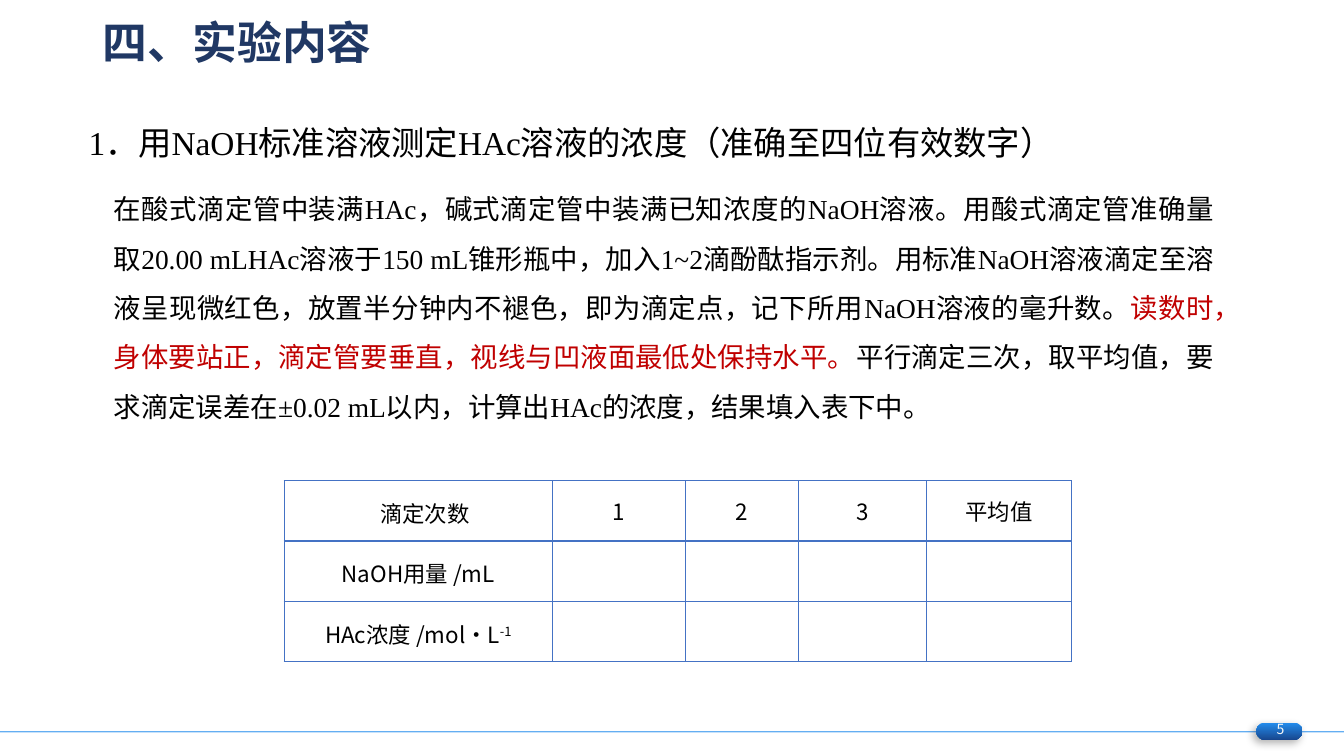
from lxml import etree
from pptx import Presentation
from pptx import util as u
from pptx.dml import color as dml
from pptx.enum import shapes, text
from pptx.oxml import ns

SLIDE_WIDTH, SLIDE_HEIGHT = u.Inches(13.33), u.Inches(7.5)
SANS, SERIF = "Noto Sans CJK SC", "Times New Roman"
BLACK, RED, NAVY, BORDER = "000000", "C00000", "203864", "4472C4"
BRIGHT_BLUE, DEEP_BLUE, OFF_WHITE = "238DED", "18478F", "F8F8F8"
CENTER, JUSTIFY = text.PP_ALIGN.CENTER, text.PP_ALIGN.JUSTIFY

HEADING = "1．用NaOH标准溶液测定HAc溶液的浓度（准确至四位有效数字）"
PROCEDURE = [
    ("在酸式滴定管中装满HAc，碱式滴定管中装满已知浓度的NaOH溶液。用酸式滴定管准确量取20.00 mLHAc溶液于150 mL锥形瓶中，"
     "加入1~2滴酚酞指示剂。用标准NaOH溶液滴定至溶液呈现微红色，放置半分钟内不褪色，即为滴定点，记下所用NaOH溶液的毫升数。",
     SERIF, BLACK),
    ("读数时，身体要站正，滴定管要垂直，视线与凹液面最低处保持水平。", SANS, RED),
    ("平行滴定三次，取平均值，要求滴定误差在±0.02 mL以内，计算出HAc的浓度，结果填入表下中。", SERIF, BLACK),
]
COLUMN_HEADS = ["1", "2", "3", "平均值"]
ROW_HEADS = ["滴定次数", "NaOH用量 /mL", "HAc浓度 /mol·L"]
COLUMN_SHARES = [19.95, 9.9, 8.4, 9.53, 10.8]
ROW_SHARE = 7.96


def across(percent):
    """Return a share of the slide's width."""
    return u.Emu(round(SLIDE_WIDTH * percent / 100))


def down(percent):
    """Return a share of the slide's height."""
    return u.Emu(round(SLIDE_HEIGHT * percent / 100))


def area(left, top, width, height):
    """Turn four percentages into a position and size."""
    return across(left), down(top), across(width), down(height)


def paint(color, value):
    """Set a colour from a hex string."""
    color.rgb = dml.RGBColor.from_string(value)


def add_xml(parent, tag, **attributes):
    """Append a DrawingML element and return it."""
    return etree.SubElement(parent, ns.qn(tag), attributes)


def write(paragraph, words, font=SANS, size=16, color=BLACK, bold=False, baseline=None):
    """Add a formatted run to a paragraph."""
    run = paragraph.add_run()
    run.text = words
    run.font.name, run.font.size, run.font.bold = font, u.Pt(size), bold
    paint(run.font.color, color)
    properties = run.font._element
    add_xml(properties, "a:ea", typeface=SANS)
    if baseline:
        properties.set("baseline", baseline)


def arrange(paragraph, alignment, spacing=1.0, before=0, left=0, first=0):
    """Set alignment, spacing and indents of a paragraph."""
    paragraph.alignment, paragraph.line_spacing = alignment, spacing
    paragraph.space_before = u.Pt(before)
    properties = paragraph._p.get_or_add_pPr()
    properties.set("marL", str(across(left)))
    properties.set("indent", str(across(first)))


def add_title(slide):
    """Place and format the slide title."""
    title = slide.shapes.title
    title.left, title.top, title.width, title.height = area(6.9, 2.13, 30.46, 10.67)
    title.text_frame.vertical_anchor = text.MSO_ANCHOR.TOP
    paragraph = title.text_frame.paragraphs[0]
    arrange(paragraph, JUSTIFY, spacing=0.9)
    write(paragraph, "四、实验内容", size=32, color=NAVY, bold=True)


def add_text_frame(slide, *place):
    """Add a wrapping text box and return its frame."""
    frame = slide.shapes.add_textbox(*area(*place)).text_frame
    frame.word_wrap = True
    return frame


def add_procedure(slide):
    """Add the heading and the experiment steps."""
    frame = add_text_frame(slide, 5.85, 15.47, 85.22, 42.13)
    heading = frame.paragraphs[0]
    arrange(heading, JUSTIFY)
    write(heading, HEADING, font=SERIF, size=23.8)
    steps = frame.add_paragraph()
    arrange(steps, JUSTIFY, spacing=1.5, before=10, left=1.88)
    for words, font, color in PROCEDURE:
        write(steps, words, font=font, size=19.6, color=color)


def format_cell(cell):
    """Give a cell no fill, thin borders and narrow margins."""
    cell.fill.background()
    cell.margin_left = cell.margin_right = u.Inches(0.07)
    cell.margin_top = cell.margin_bottom = 0
    properties = cell._tc.get_or_add_tcPr()
    for index, side in enumerate("LRTB"):
        line = add_xml(properties, f"a:ln{side}", w=str(u.Pt(1)))
        add_xml(add_xml(line, "a:solidFill"), "a:srgbClr", val=BORDER)
        properties.insert(index, line)


def add_results_table(slide):
    """Add the table for the titration results."""
    rows, columns = len(ROW_HEADS), len(COLUMN_SHARES)
    place = area(21.15, 63.6, sum(COLUMN_SHARES), rows * ROW_SHARE)
    table = slide.shapes.add_table(rows, columns, *place).table
    table.first_row = table.horz_banding = False
    for column, share in zip(table.columns, COLUMN_SHARES):
        column.width = across(share)
    for row in table.rows:
        row.height = down(ROW_SHARE)
    for cell in table.iter_cells():
        format_cell(cell)
    for index, words in enumerate(ROW_HEADS):
        paragraph = table.cell(index, 0).text_frame.paragraphs[0]
        arrange(paragraph, CENTER, spacing=1.5, first=0 if index else 0.98)
        write(paragraph, words)
    write(paragraph, "-1", baseline="30000")
    for index, words in enumerate(COLUMN_HEADS, start=1):
        cell = table.cell(0, index)
        cell.vertical_anchor = text.MSO_ANCHOR.MIDDLE
        paragraph = cell.text_frame.paragraphs[0]
        arrange(paragraph, CENTER)
        write(paragraph, words)


def add_footer_line(slide):
    """Draw the translucent line across the foot of the slide."""
    line = slide.shapes.add_connector(
        shapes.MSO_CONNECTOR.STRAIGHT, 0, down(96.8), SLIDE_WIDTH, down(96.8))
    line.line.width = u.Pt(1)
    paint(line.line.color, BRIGHT_BLUE)
    properties = line._element.spPr
    add_xml(properties.find(".//" + ns.qn("a:srgbClr")), "a:alpha", val="70000")
    add_xml(properties, "a:effectLst")


def add_page_badge(slide):
    """Draw the rounded badge and its page number."""
    badge = slide.shapes.add_shape(
        shapes.MSO_SHAPE.ROUNDED_RECTANGLE, *area(93.47, 95.6, 3.45, 2.27))
    badge.adjustments[0] = 0.5
    badge.line.fill.background()
    badge.fill.gradient()
    badge.fill.gradient_angle = 270
    for stop, color in zip(badge.fill.gradient_stops, (BRIGHT_BLUE, DEEP_BLUE)):
        paint(stop.color, color)
    badge.shadow.inherit = False
    effects = badge._element.spPr.find(ns.qn("a:effectLst"))
    shadow = add_xml(effects, "a:outerShdw", blurRad=str(u.Pt(6)),
                     dist=str(u.Pt(3)), dir="8100000", rotWithShape="0")
    add_xml(add_xml(shadow, "a:srgbClr", val=BLACK), "a:alpha", val="30000")
    paragraph = add_text_frame(slide, 93.25, 94.67, 4.05, 3.6).paragraphs[0]
    arrange(paragraph, CENTER)
    write(paragraph, "5", size=10, color=OFF_WHITE)


def main():
    """Build and save the slide."""
    presentation = Presentation()
    presentation.slide_width, presentation.slide_height = SLIDE_WIDTH, SLIDE_HEIGHT
    slide = presentation.slides.add_slide(presentation.slide_layouts[5])
    add_footer_line(slide)
    add_page_badge(slide)
    add_title(slide)
    add_procedure(slide)
    add_results_table(slide)
    presentation.save("out.pptx")


if __name__ == "__main__":
    main()
